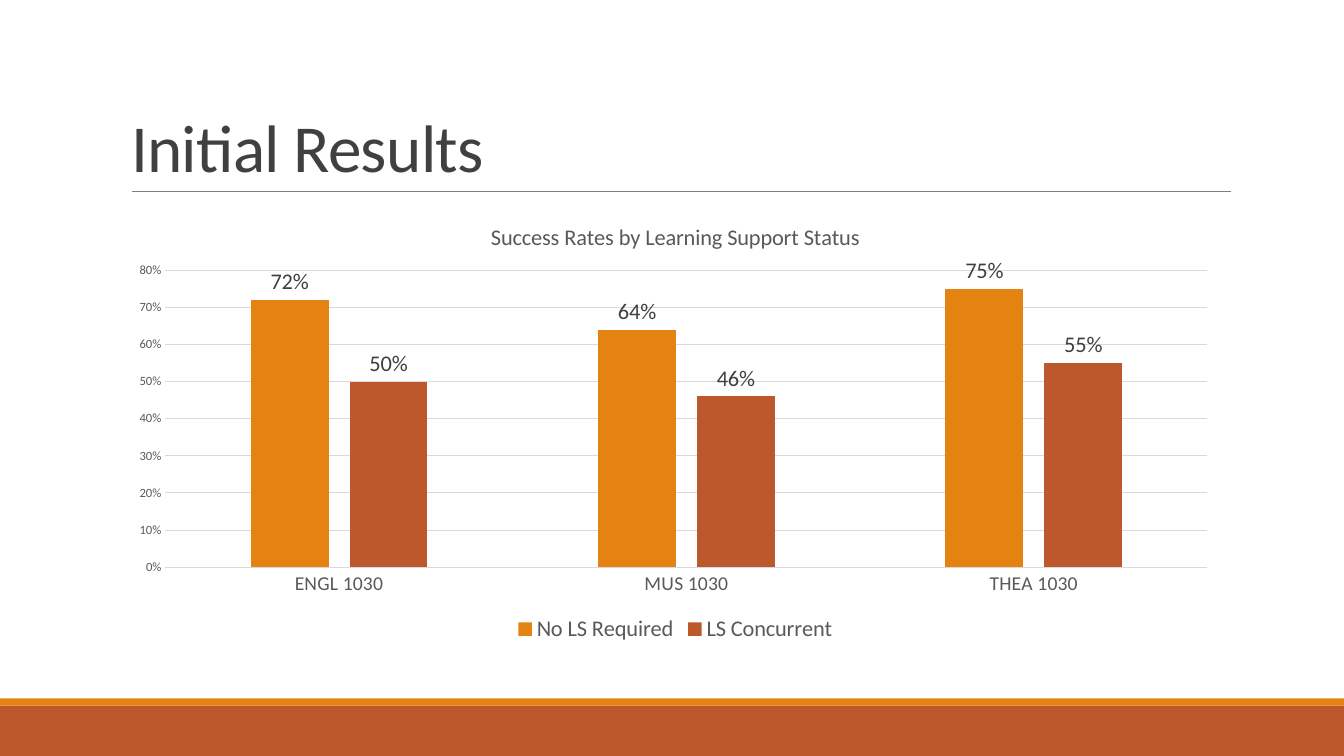
from dataclasses import dataclass

from lxml import etree
from pptx import Presentation
from pptx.chart.data import CategoryChartData
from pptx.dml.color import RGBColor
from pptx.enum.chart import XL_CHART_TYPE as ChartType
from pptx.enum.chart import XL_LABEL_POSITION as LabelPos
from pptx.enum.chart import XL_LEGEND_POSITION as LegendPos
from pptx.enum.chart import XL_TICK_MARK as TickMark
from pptx.enum.shapes import MSO_CONNECTOR as Connector
from pptx.enum.shapes import MSO_SHAPE as Shape
from pptx.enum.text import MSO_ANCHOR as Anchor
from pptx.enum.text import MSO_AUTO_SIZE as AutoSize
from pptx.enum.text import PP_ALIGN as Align
from pptx.oxml.ns import qn
from pptx.util import Cm, Pt

FONT = "Calibri"
COLORS = {
    "orange": "E48312",
    "rust": "BD582C",
    "rule": "808080",
    "grid": "D9D9D9",
    "heading": "404040",
    "label": "595959",
}
SLIDE_W, SLIDE_H = 33.87, 19.05
LEFT, WIDTH = 3.05, 27.94


@dataclass
class Band:
    top: float
    height: float
    color: str


@dataclass
class Series:
    name: str
    values: tuple[float, ...]
    color: str


BANDS = [Band(17.78, 1.27, "rust"), Band(17.6, 0.18, "orange")]
COURSES = ["ENGL 1030", "MUS 1030", "THEA 1030"]
SERIES = [
    Series("No LS Required", (0.72, 0.64, 0.75), "orange"),
    Series("LS Concurrent", (0.5, 0.46, 0.55), "rust"),
]
PLOT_LAYOUT = {"x": 0.04, "y": 0.15, "w": 0.94, "h": 0.67}


def rgb(name: str) -> RGBColor:
    return RGBColor.from_string(COLORS[name])


def set_font(font, size: float, color: str) -> None:
    font.name, font.size, font.bold = FONT, Pt(size), False
    font.color.rgb = rgb(color)


def set_line(line, color: str, width: float) -> None:
    line.color.rgb, line.width = rgb(color), Pt(width)


def write(tf, text: str, *, size: float, color: str, align=None,
          line_spacing: float | None = None, tracking: float | None = None) -> None:
    """Put one formatted run in the frame; tracking is in points."""
    p = tf.paragraphs[0]
    p.alignment = align
    p.line_spacing = line_spacing
    r = p.add_run()
    r.text = text
    set_font(r.font, size, color)
    if tracking is not None:
        r.font._element.set("spc", str(round(tracking * 100)))


def add_band(slide, band: Band) -> None:
    sp = slide.shapes.add_shape(
        Shape.RECTANGLE, 0, Cm(band.top), Cm(SLIDE_W), Cm(band.height))
    sp.shadow.inherit = False
    sp.fill.solid()
    sp.fill.fore_color.rgb = rgb(band.color)
    sp.line.fill.background()


def add_rule(slide) -> None:
    line = slide.shapes.add_connector(
        Connector.STRAIGHT, Cm(3.33), Cm(4.83), Cm(31.01), Cm(4.83))
    set_line(line.line, "rule", 0.5)
    etree.SubElement(line._element.spPr, qn("a:effectLst"))


def add_title(slide) -> None:
    sp = slide.shapes.title
    sp.left, sp.top, sp.width, sp.height = Cm(LEFT), Cm(0.79), Cm(WIDTH), Cm(4.04)
    tf = sp.text_frame
    tf.auto_size, tf.word_wrap = AutoSize.NONE, True
    tf.vertical_anchor = Anchor.BOTTOM
    write(tf, "Initial Results", size=48, color="heading", align=Align.LEFT,
          line_spacing=0.85, tracking=-0.5)


def place_plot(chart) -> None:
    """Fix the inner plot area as fractions of the chart's frame."""
    area = chart._chartSpace.find(".//" + qn("c:plotArea"))
    for old in area.findall(qn("c:layout")):
        area.remove(old)
    layout = etree.Element(qn("c:layout"))
    manual = etree.SubElement(layout, qn("c:manualLayout"))
    settings = {"layoutTarget": "inner", "xMode": "edge", "yMode": "edge", **PLOT_LAYOUT}
    for tag, val in settings.items():
        etree.SubElement(manual, qn(f"c:{tag}")).set("val", str(val))
    area.insert(0, layout)


def format_axes(chart) -> None:
    cat, val = chart.category_axis, chart.value_axis
    for axis, size in ((cat, 14), (val, 9)):
        axis.major_tick_mark = axis.minor_tick_mark = TickMark.NONE
        set_font(axis.tick_labels.font, size, "label")
    set_line(cat.format.line, "grid", 0.75)
    val.format.line.fill.background()
    val.minimum_scale, val.maximum_scale, val.major_unit = 0, 0.8, 0.1
    val.has_major_gridlines = True
    set_line(val.major_gridlines.format.line, "grid", 0.75)
    val.tick_labels.number_format = "0%"
    val.tick_labels.number_format_is_linked = False


def format_series(plot) -> None:
    plot.gap_width, plot.overlap, plot.vary_by_categories = 219, -27, False
    for series, item in zip(plot.series, SERIES):
        series.format.fill.solid()
        series.format.fill.fore_color.rgb = rgb(item.color)
        labels = series.data_labels
        labels.show_value, labels.position = True, LabelPos.OUTSIDE_END
        labels.number_format, labels.number_format_is_linked = "0%", False
        set_font(labels.font, 16, "heading")


def add_success_chart(slide) -> None:
    data = CategoryChartData(number_format="0%")
    data.categories = COURSES
    for item in SERIES:
        data.add_series(item.name, item.values)
    chart = slide.shapes.add_chart(
        ChartType.COLUMN_CLUSTERED, Cm(LEFT), Cm(5.13), Cm(WIDTH), Cm(11.18), data).chart
    set_font(chart.font, 10, "label")
    chart.has_title = True
    write(chart.chart_title.text_frame, "Success Rates by Learning Support Status",
          size=16, color="label")
    chart.chart_title.include_in_layout = False
    chart.has_legend = True
    chart.legend.position = LegendPos.BOTTOM
    chart.legend.include_in_layout = False
    set_font(chart.legend.font, 16, "label")
    format_axes(chart)
    format_series(chart.plots[0])
    place_plot(chart)


def main() -> None:
    prs = Presentation()
    prs.slide_width, prs.slide_height = Cm(SLIDE_W), Cm(SLIDE_H)
    slide = prs.slides.add_slide(prs.slide_layouts.get_by_name("Title Only"))
    for band in BANDS:
        add_band(slide, band)
    add_rule(slide)
    add_title(slide)
    add_success_chart(slide)
    prs.save("out.pptx")


if __name__ == "__main__":
    main()
